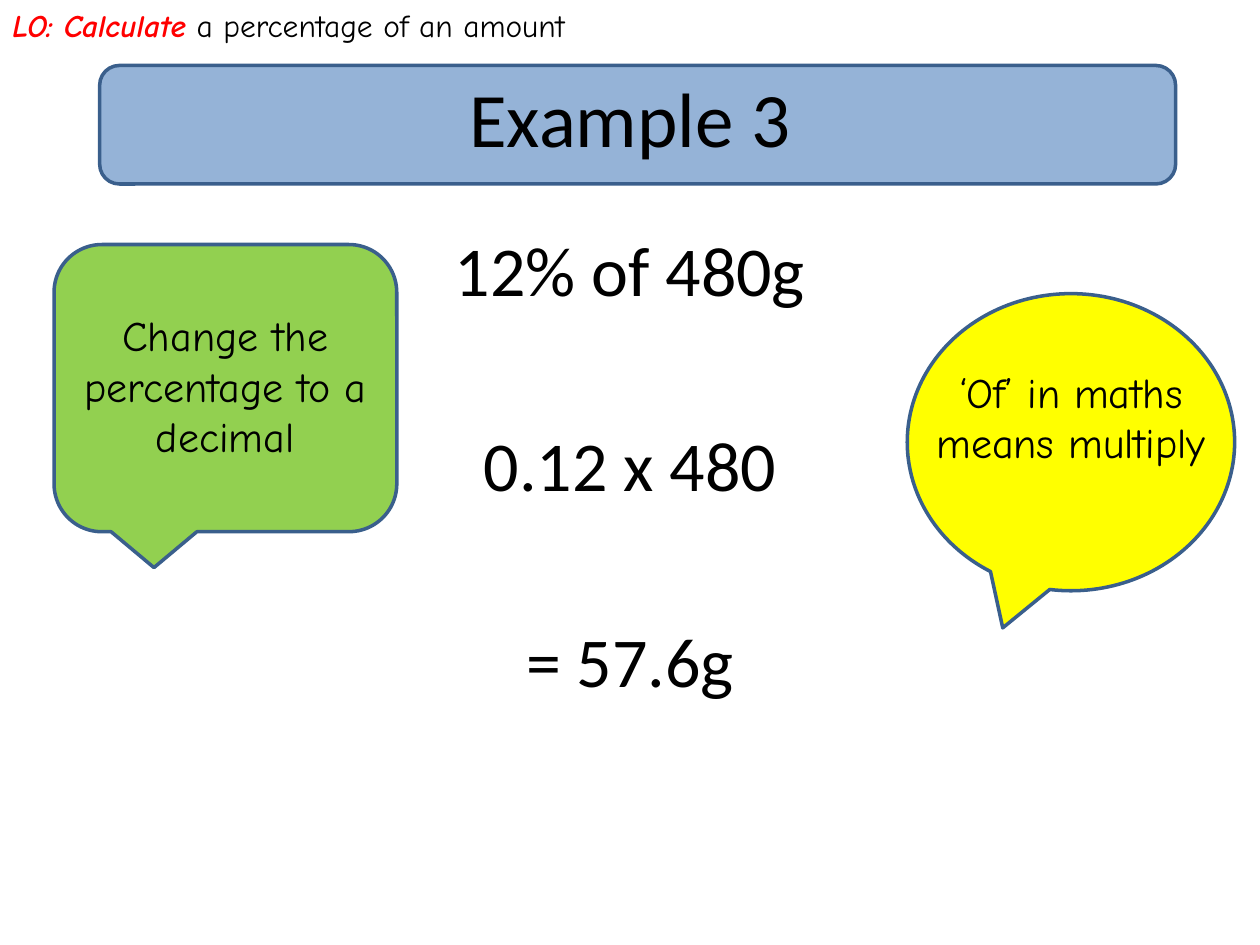
from pptx import Presentation
from pptx.dml.color import RGBColor
from pptx.enum.shapes import MSO_SHAPE
from pptx.enum.text import MSO_ANCHOR, PP_ALIGN
from pptx.util import Cm, Pt


def rgb(value):
    return RGBColor.from_string(value)


def add_text(box, lines, size, font, align=PP_ALIGN.CENTER, gap=0, anchor=MSO_ANCHOR.TOP):
    """Each line is a list of (text, colour, emphasised) runs."""
    tf = slide.shapes.add_textbox(*[Cm(v) for v in box]).text_frame
    tf.word_wrap = True
    tf.vertical_anchor = anchor
    for i, runs in enumerate(lines):
        p = tf.add_paragraph() if i else tf.paragraphs[0]
        p.alignment = align
        p.space_before = Pt(gap if i else 0)
        for text, color, emphasis in runs:
            r = p.add_run()
            r.text = text
            r.font.name = font
            r.font.size = Pt(size)
            r.font.bold = r.font.italic = emphasis
            r.font.color.rgb = rgb(color)


prs = Presentation()
prs.slide_width, prs.slide_height = Cm(25.4), Cm(19.05)
slide = prs.slides.add_slide(prs.slide_layouts[6])

# Title banner and the two speech bubbles
for kind, box, fill in [
    (MSO_SHAPE.ROUNDED_RECTANGLE, (2.01, 1.32, 21.69, 2.39), "95B3D7"),
    (MSO_SHAPE.ROUNDED_RECTANGULAR_CALLOUT, (1.09, 4.93, 6.91, 5.79), "92D050"),
    (MSO_SHAPE.OVAL_CALLOUT, (18.29, 5.92, 6.6, 5.99), "FFFF00"),
]:
    sp = slide.shapes.add_shape(kind, *[Cm(v) for v in box])
    sp.shadow.inherit = False
    sp.fill.solid()
    sp.fill.fore_color.rgb = rgb(fill)
    sp.line.color.rgb = rgb("3A5F8C")
    sp.line.width = Pt(2)

# Title
add_text((1.27, 0.76, 22.86, 3.18), [[("Example 3", "000000", False)]],
         44, "Calibri", anchor=MSO_ANCHOR.MIDDLE)

# Worked steps
steps = ["12% of 480g", "0.12 x 480", "= 57.6g"]
add_text((1.27, 4.45, 22.86, 12.57), [[(s, "000000", False)] for s in steps],
         40, "Calibri", gap=63.5)

# Bubble hints
for box, hint in [
    ((1.24, 6.12, 6.6, 3.33), "Change the percentage to a decimal"),
    ((18.29, 7.26, 6.6, 2.31), "‘Of’ in maths means multiply"),
]:
    add_text(box, [[(hint, "000000", False)]], 24, "Comic Neue")

# Learning objective
add_text((0, 0, 20.5, 2.64),
         [[("LO: Calculate", "FF0000", True),
           (" a percentage of an amount", "000000", False)]],
         18, "Comic Neue", align=PP_ALIGN.LEFT)

prs.save("out.pptx")
